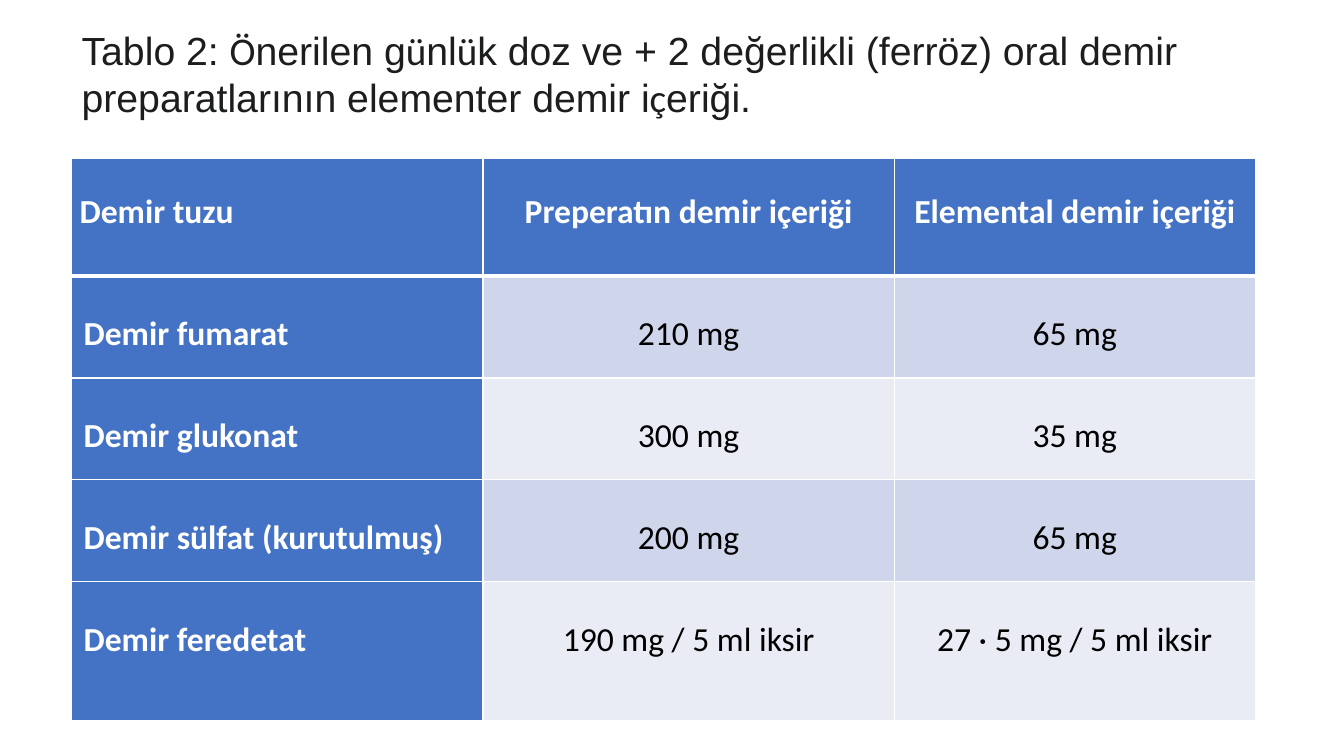
from dataclasses import dataclass
from itertools import groupby

from lxml.etree import SubElement
from pptx import Presentation
from pptx.dml.color import RGBColor as RGB
from pptx.enum.text import MSO_ANCHOR as Anchor, MSO_AUTO_SIZE as AutoSize, PP_ALIGN as Align
from pptx.oxml.ns import qn
from pptx.util import Inches, Pt


@dataclass(frozen=True)
class Theme:
    title_font: str = "Arial"
    body_font: str = "Calibri"
    title_size: int = 28
    body_size: int = 24
    title_ink: str = "1C1D1E"
    white: str = "FFFFFF"
    black: str = "000000"
    header: str = "4472C4"
    bands: tuple = ("CFD5EA", "E9EBF5")


THEME = Theme()
TITLE = ("Tablo 2: Önerilen günlük doz ve + 2 değerlikli (ferröz) oral demir "
         "preparatlarının elementer demir içeriği.")
BODY_FONT_LETTERS = "Öüç"
ROWS = [
    ("Demir tuzu", "Preperatın demir içeriği", "Elemental demir içeriği"),
    ("Demir fumarat", "210 mg", "65 mg"),
    ("Demir glukonat", "300 mg", "35 mg"),
    ("Demir sülfat (kurutulmuş)", "200 mg", "65 mg"),
    ("Demir feredetat", "190 mg / 5 ml iksir", "27 · 5 mg / 5 ml iksir"),
]
COL_WIDTHS = (4.08, 4.08, 3.58)
ROW_HEIGHTS = (1.17, 1.01, 1.01, 1.01, 1.38)
LEFT, WIDTH = Inches(0.71), Inches(11.74)
TEXT_DROP = 0.41


def add_title(s):
    title = s.shapes.title
    title.left, title.top, title.width, title.height = LEFT, Inches(0.21), WIDTH, Inches(1.04)
    tf = title.text_frame
    tf.word_wrap = True
    tf.auto_size = AutoSize.NONE
    tf.vertical_anchor = Anchor.MIDDLE
    p = tf.paragraphs[0]
    p.alignment = Align.LEFT
    p.font.size = Pt(THEME.title_size)
    p.font.color.rgb = RGB.from_string(THEME.title_ink)
    for in_body_font, letters in groupby(TITLE, lambda c: c in BODY_FONT_LETTERS):
        r = p.add_run()
        r.text = "".join(letters)
        r.font.name = THEME.body_font if in_body_font else THEME.title_font


def add_borders(cell, top, bottom):
    tc_pr = cell._tc.get_or_add_tcPr()
    for side, width in (("L", 1), ("R", 1), ("T", top), ("B", bottom)):
        ln = SubElement(tc_pr, qn(f"a:ln{side}"), w=str(Pt(width)))
        fill = SubElement(ln, qn("a:solidFill"))
        SubElement(fill, qn("a:srgbClr"), val=THEME.white)


def fill_cell(cell, text, row, col):
    heading = row == 0 or col == 0
    inset = 0.08 if row == 0 else 0.12
    last = row == len(ROWS) - 1
    add_borders(cell, 3 if row == 1 else 1, 3 if row == 0 else 1)
    cell.fill.solid()
    colour = THEME.header if heading else THEME.bands[(row - 1) % 2]
    cell.fill.fore_color.rgb = RGB.from_string(colour)
    cell.margin_left = cell.margin_right = Inches(inset)
    cell.margin_top = Inches(inset + TEXT_DROP)
    cell.margin_bottom = Inches(inset if row == 0 or last else 0)
    p = cell.text_frame.paragraphs[0]
    p.text = text
    p.alignment = Align.CENTER if col else Align.LEFT
    p.line_spacing = Pt(18)
    p.space_after = Pt(11.2)
    p.font.name = THEME.body_font
    p.font.size = Pt(THEME.body_size)
    p.font.bold = heading
    p.font.color.rgb = RGB.from_string(THEME.white if heading else THEME.black)


def add_iron_table(s):
    frame = s.shapes.add_table(len(ROWS), len(COL_WIDTHS), LEFT, Inches(1.57),
                               WIDTH, Inches(sum(ROW_HEIGHTS)))
    table = frame.table
    table.first_col = True
    for column, width in zip(table.columns, COL_WIDTHS):
        column.width = Inches(width)
    for row, height in zip(table.rows, ROW_HEIGHTS):
        row.height = Inches(height)
    for i, texts in enumerate(ROWS):
        for j, text in enumerate(texts):
            fill_cell(table.cell(i, j), text, i, j)


def main():
    prs = Presentation()
    prs.slide_width, prs.slide_height = Inches(13.33), Inches(7.5)
    s = prs.slides.add_slide(prs.slide_layouts[5])
    add_title(s)
    add_iron_table(s)
    prs.save("out.pptx")


if __name__ == "__main__":
    main()
